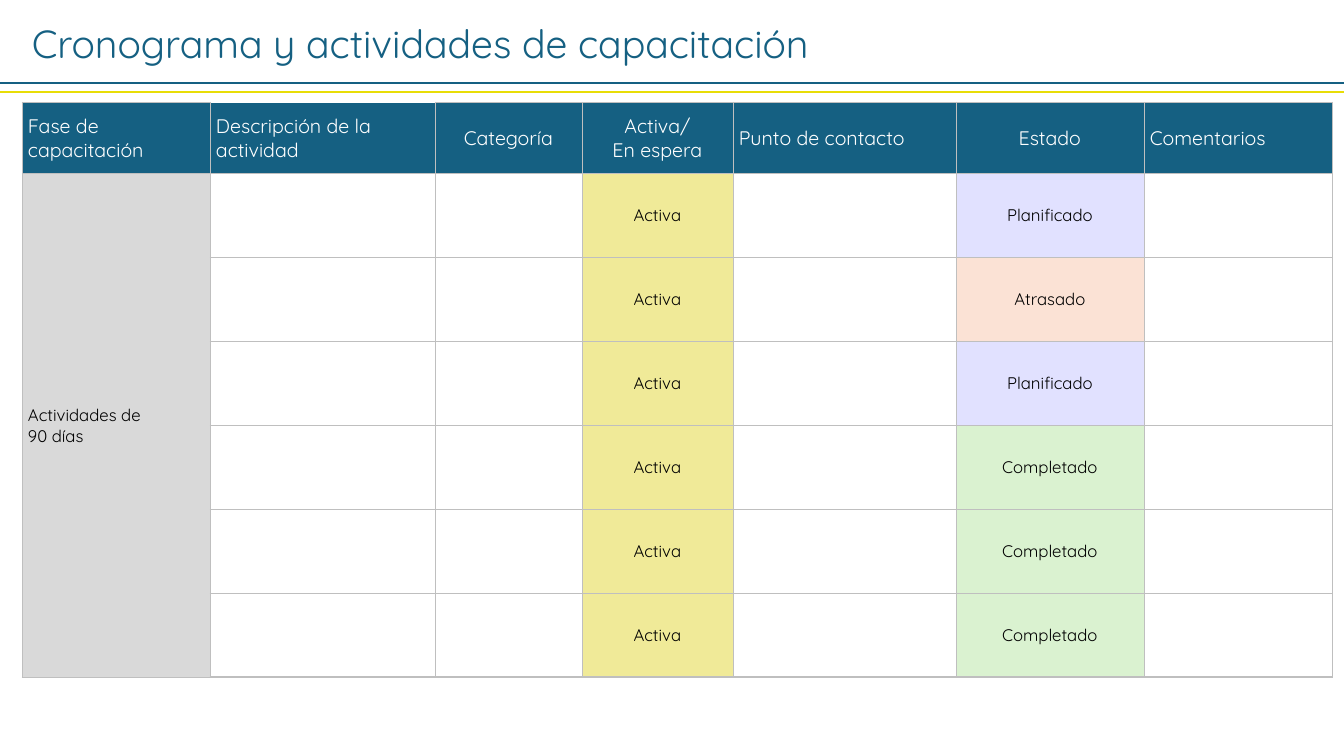
from pptx import Presentation
from pptx.dml.color import RGBColor
from pptx.enum.shapes import MSO_CONNECTOR
from pptx.enum.text import MSO_ANCHOR, MSO_AUTO_SIZE, PP_ALIGN
from pptx.oxml import parse_xml
from pptx.oxml.ns import nsdecls
from pptx.util import Pt

SCALE = 914400 / 100.8
BLUE = RGBColor(0x15, 0x60, 0x82)
YELLOW = RGBColor(0xE8, 0xDD, 0x06)
WHITE = RGBColor(0xFF, 0xFF, 0xFF)
BLACK = RGBColor(0, 0, 0)
GREY = RGBColor(0xD9, 0xD9, 0xD9)
EDGE = RGBColor(0xBF, 0xBF, 0xBF)
ACTIVE = RGBColor(0xF0, 0xEA, 0x98)
STATES = {
    "Planificado": RGBColor(0xE1, 0xE1, 0xFF),
    "Atrasado": RGBColor(0xFB, 0xE2, 0xD5),
    "Completado": RGBColor(0xDA, 0xF2, 0xD0),
}

HEADS = ["Fase de capacitación", "Descripción de la actividad", "Categoría",
         "Activa/\nEn espera", "Punto de contacto", "Estado", "Comentarios"]
WIDTHS = [188, 225, 147, 151, 223, 188, 188]
CENTRED = {2, 3, 5}
STATUS = ["Planificado", "Atrasado", "Planificado",
          "Completado", "Completado", "Completado"]
HEAD_H, ROW_H = 71, 84


def px(n):
    return round(n * SCALE)


def write(frame, text, size=12, color=BLACK, font="Quicksand", align=PP_ALIGN.LEFT):
    para = frame.paragraphs[0]
    para.text = text
    para.alignment = align
    for run in para.runs:
        run.font.name = font
        run.font.size = Pt(size)
        run.font.color.rgb = color


class Deck:
    def __init__(self):
        self.prs = Presentation()
        self.prs.slide_width, self.prs.slide_height = px(1344), px(756)
        self.slide = self.prs.slides.add_slide(self.prs.slide_layouts[6])
        self.shapes = self.slide.shapes

    def title(self, text, x, y, w, h):
        frame = self.shapes.add_textbox(px(x), px(y), px(w), px(h)).text_frame
        frame.word_wrap = True
        frame.auto_size = MSO_AUTO_SIZE.SHAPE_TO_FIT_TEXT
        write(frame, text, size=28, color=BLUE)

    def rule(self, y, color):
        line = self.shapes.add_connector(
            MSO_CONNECTOR.STRAIGHT, 0, px(y), px(1344), px(y))
        line.line.color.rgb = color
        line.line.width = Pt(1.5)
        line._element.spPr.append(parse_xml(f"<a:effectLst {nsdecls('a')}/>"))

    def grid(self, x, y, widths, heights):
        frame = self.shapes.add_table(len(heights), len(widths), px(x), px(y),
                                      px(sum(widths)), px(sum(heights)))
        table = frame.table
        table.first_row = table.horz_banding = False
        for col, width in zip(table.columns, widths):
            col.width = px(width)
        for row, height in zip(table.rows, heights):
            row.height = px(height)
        return table

    def border(self, cell, sides="LRTB", thick=""):
        """Draw the named sides; those also in thick are 1.5 pt."""
        props = cell._tc.get_or_add_tcPr()
        for side in sides:
            width = Pt(1.5 if side in thick else 0.5)
            props.append(parse_xml(
                f'<a:ln{side} {nsdecls("a")} w="{width}"><a:solidFill>'
                f'<a:srgbClr val="{EDGE}"/></a:solidFill></a:ln{side}>'))

    def cell(self, cell, text="", fill=WHITE, centre=False, **style):
        cell.fill.solid()
        cell.fill.fore_color.rgb = fill
        cell.vertical_anchor = MSO_ANCHOR.MIDDLE
        cell.margin_left = px(1 if centre else 6)
        cell.margin_right = cell.margin_top = px(1)
        cell.margin_bottom = 0
        align = PP_ALIGN.CENTER if centre else PP_ALIGN.LEFT
        write(cell.text_frame, text, align=align, **style)


def main():
    deck = Deck()
    last = len(STATUS)
    table = deck.grid(22, 102, WIDTHS, [HEAD_H] + [ROW_H] * last)

    for row in range(last + 1):
        for col in range(len(HEADS)):
            deck.border(table.cell(row, col),
                        sides="LRB" if (row, col) == (0, 1) else "LRTB",
                        thick="B" if row == last else "")

    for col, head in enumerate(HEADS):
        deck.cell(table.cell(0, col), head, BLUE, col in CENTRED,
                  size=14, color=WHITE)

    phase = table.cell(1, 0)
    phase.merge(table.cell(last, 0))
    deck.cell(phase, "Actividades de \n90 días", GREY)

    for row, state in enumerate(STATUS, 1):
        filled = {3: ("Activa", ACTIVE), 5: (state, STATES[state])}
        for col in range(1, len(HEADS)):
            text, fill = filled.get(col, ("", WHITE))
            deck.cell(table.cell(row, col), text, fill, col in CENTRED)

    deck.title("Cronograma y actividades de capacitación", 22, 14, 1024, 57)
    deck.rule(83, BLUE)
    deck.rule(92, YELLOW)
    deck.prs.save("out.pptx")


if __name__ == "__main__":
    main()
